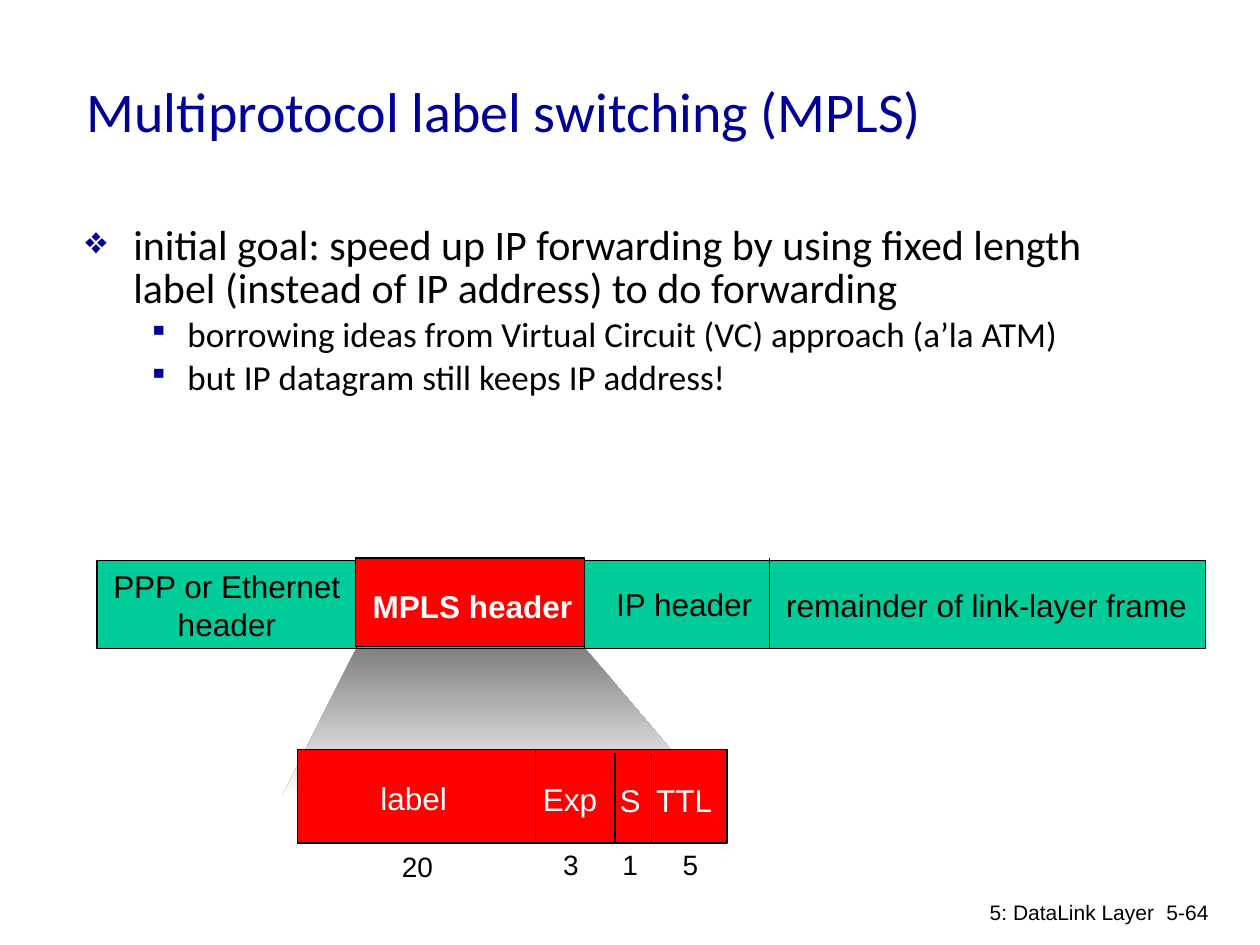
from lxml import etree
from pptx import Presentation
from pptx.dml.color import RGBColor
from pptx.enum.shapes import MSO_CONNECTOR, MSO_SHAPE
from pptx.enum.text import MSO_ANCHOR, MSO_AUTO_SIZE, PP_ALIGN
from pptx.oxml.ns import qn
from pptx.util import Inches, Pt

COLORS = {
    "black": "000000", "white": "FFFFFF", "navy": "000099",
    "green": "00CC99", "red": "FF0000", "gray": "808080",
}
LEFT, CENTER, RIGHT = PP_ALIGN.LEFT, PP_ALIGN.CENTER, PP_ALIGN.RIGHT


def rgb(name):
    return RGBColor.from_string(COLORS[name])


class SlideBuilder:
    def __init__(self, slide):
        self.s = slide
        self.font = "Arial"
        self.heading_font = "Calibri"
        self.line_width = Pt(0.75)

    def format_paragraph(self, p, size, color="black", font=None, bold=None, align=LEFT):
        p.alignment = align
        for r in p.runs:
            r.font.name = font or self.font
            r.font.size = Pt(size)
            r.font.bold = bold
            r.font.color.rgb = rgb(color)

    def text(self, text, box, size, wrap=False, anchor=MSO_ANCHOR.TOP, fill=None, **style):
        """Add a text box; an unwrapped one takes the size of its text."""
        sp = self.s.shapes.add_textbox(*map(Inches, box))
        if fill:
            sp.fill.solid()
            sp.fill.fore_color.rgb = rgb(fill)
        tf = sp.text_frame
        tf.text = text
        tf.word_wrap = wrap
        tf.vertical_anchor = anchor
        tf.auto_size = MSO_AUTO_SIZE.NONE if wrap else MSO_AUTO_SIZE.SHAPE_TO_FIT_TEXT
        for p in tf.paragraphs:
            self.format_paragraph(p, size, **style)
        return sp

    def bullet(self, p, char, margin, hanging, scale):
        pPr = p._p.get_or_add_pPr()
        pPr.set("marL", str(Inches(margin)))
        pPr.set("indent", str(-Inches(hanging)))
        color = etree.SubElement(pPr, qn("a:buClr"))
        etree.SubElement(color, qn("a:srgbClr"), val=COLORS["navy"])
        etree.SubElement(pPr, qn("a:buSzPct"), val=str(scale * 1000))
        etree.SubElement(pPr, qn("a:buChar"), char=char)

    def bullets(self, items, box):
        """Add a list of (level, text) items."""
        levels = [(24, "❖", 0.38, 0.38, 90), (20, "▪", 0.81, 0.31, 80)]
        sp = self.text("\n".join(text for _, text in items), box, 24, wrap=True)
        for p, (level, _) in zip(sp.text_frame.paragraphs, items):
            size, *mark = levels[level]
            self.format_paragraph(p, size, font=self.heading_font)
            p.level = level
            p.line_spacing = 0.85
            p.space_before = Pt(size * 0.2)
            self.bullet(p, *mark)

    def rect(self, box, fill):
        sp = self.s.shapes.add_shape(MSO_SHAPE.RECTANGLE, *map(Inches, box))
        sp.shadow.inherit = False
        sp.fill.solid()
        sp.fill.fore_color.rgb = rgb(fill)
        sp.line.color.rgb = rgb("black")
        sp.line.width = self.line_width

    def divider(self, x, top, bottom):
        line = self.s.shapes.add_connector(
            MSO_CONNECTOR.STRAIGHT, Inches(x), Inches(top), Inches(x), Inches(bottom))
        line.line.color.rgb = rgb("black")
        line.line.width = self.line_width
        etree.SubElement(line._element.spPr, qn("a:effectLst"))

    def zoom_beam(self, points):
        """Add an outline that fades from gray at the top to white."""
        (x, y), *rest = [(Inches(a), Inches(b)) for a, b in points]
        builder = self.s.shapes.build_freeform(x, y)
        builder.add_line_segments(rest, close=True)
        sp = builder.convert_to_shape()
        sp.shadow.inherit = False
        sp.line.fill.background()
        sp.fill.gradient()
        sp.fill.gradient_angle = 270
        for stop, color in zip(sp.fill.gradient_stops, ("gray", "white")):
            stop.color.rgb = rgb(color)


def main():
    prs = Presentation()
    prs.slide_width, prs.slide_height = Inches(10), Inches(7.5)
    b = SlideBuilder(prs.slides.add_slide(prs.slide_layouts[6]))

    b.text("Multiprotocol label switching (MPLS)", (0.59, 0.25, 8.5, 1.25), 32, wrap=True,
           anchor=MSO_ANCHOR.MIDDLE, color="navy", font=b.heading_font)
    b.bullets([
        (0, "initial goal: speed up IP forwarding by using fixed length label "
            "(instead of IP address) to do forwarding"),
        (1, "borrowing ideas from Virtual Circuit (VC) approach (a’la ATM)"),
        (1, "but IP datagram still keeps IP address!"),
    ], (0.58, 1.75, 8.5, 5.08))
    b.text("5: DataLink Layer", (6.09, 7.09, 3.17, 0.5), 12, wrap=True, align=RIGHT)
    b.text("5-64", (8.95, 7.09, 0.74, 0.5), 12, wrap=True, align=RIGHT)

    # Link-layer frame
    b.zoom_beam([(2.83, 5.14), (2.24, 6.32), (5.64, 6.32), (4.64, 5.14)])
    b.rect((0.77, 4.45, 8.8, 0.7), "green")
    b.text("PPP or Ethernet\nheader", (0.76, 4.45, 2.08, 0.7), 18, align=CENTER)
    b.text("IP header", (4.79, 4.59, 1.28, 0.4), 18, align=CENTER)
    for x in (2.83, 4.64, 6.11):
        b.divider(x, 4.43, 5.15)
    b.text("remainder of link-layer frame", (6.14, 4.6, 3.38, 0.4), 18)
    b.rect((2.82, 4.43, 1.82, 0.7), "red")
    b.text("MPLS header", (2.75, 4.61, 2, 0.4), 18, color="white", bold=True, align=CENTER)

    # MPLS header fields, then their widths in bits
    b.rect((2.36, 5.95, 3.41, 0.74), "red")
    for name, x, y, width in [("label", 2.92, 6.13, 0.73), ("Exp", 4.21, 6.14, 0.63),
                              ("S", 4.82, 6.15, 0.37), ("TTL", 5.11, 6.15, 0.65)]:
        b.text(name, (x, y, width, 0.4), 18, fill="red", color="white")
    for x, top in [(4.25, 5.96), (4.88, 5.98), (5.17, 5.98)]:
        b.divider(x, top, top + 0.71)
    for bits, x, y, width in [("20", 3.09, 6.69, 0.45), ("3", 4.37, 6.68, 0.32),
                              ("1", 4.84, 6.68, 0.32), ("5", 5.32, 6.68, 0.32)]:
        b.text(bits, (x, y, width, 0.37), 16)

    prs.save("out.pptx")


if __name__ == "__main__":
    main()
